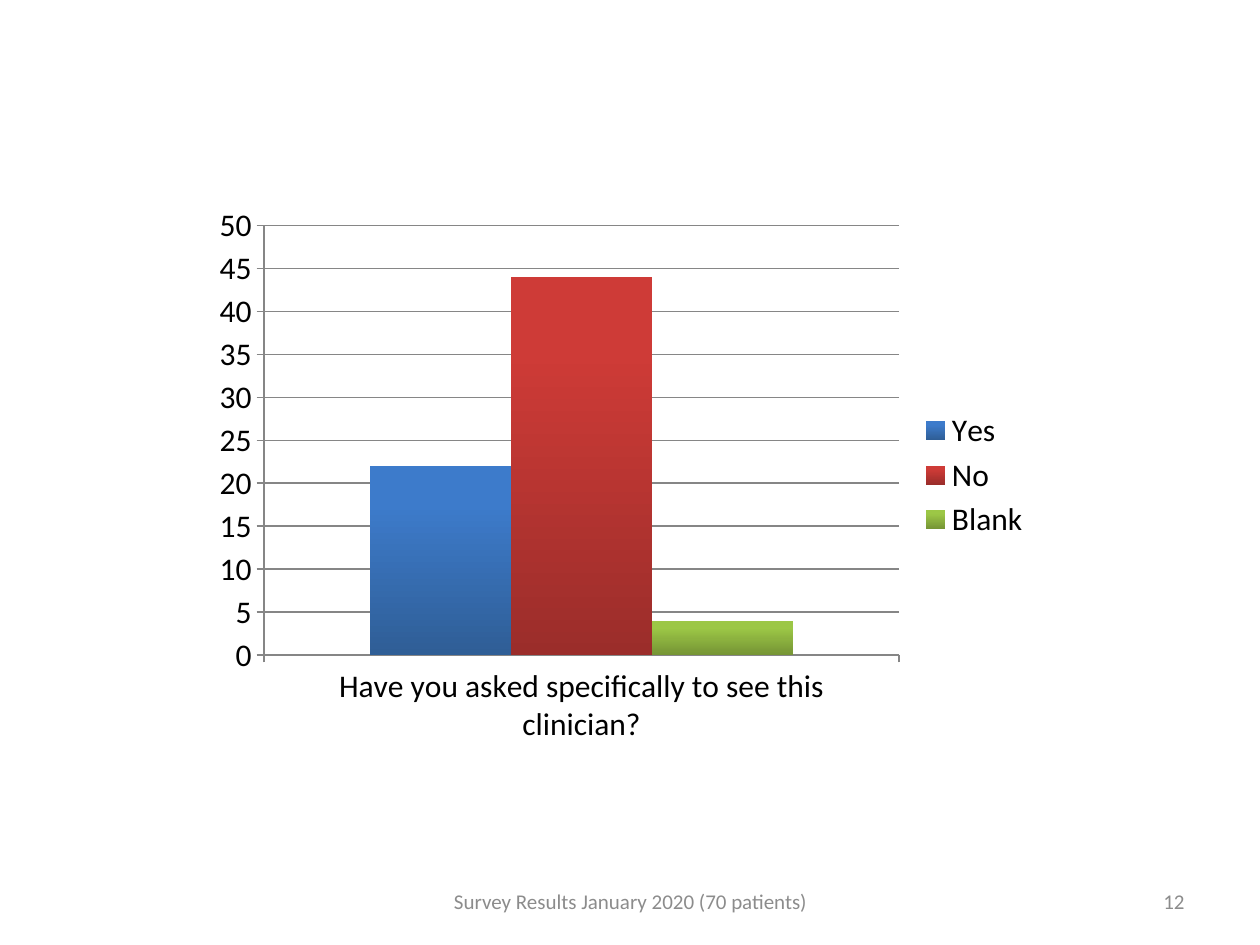
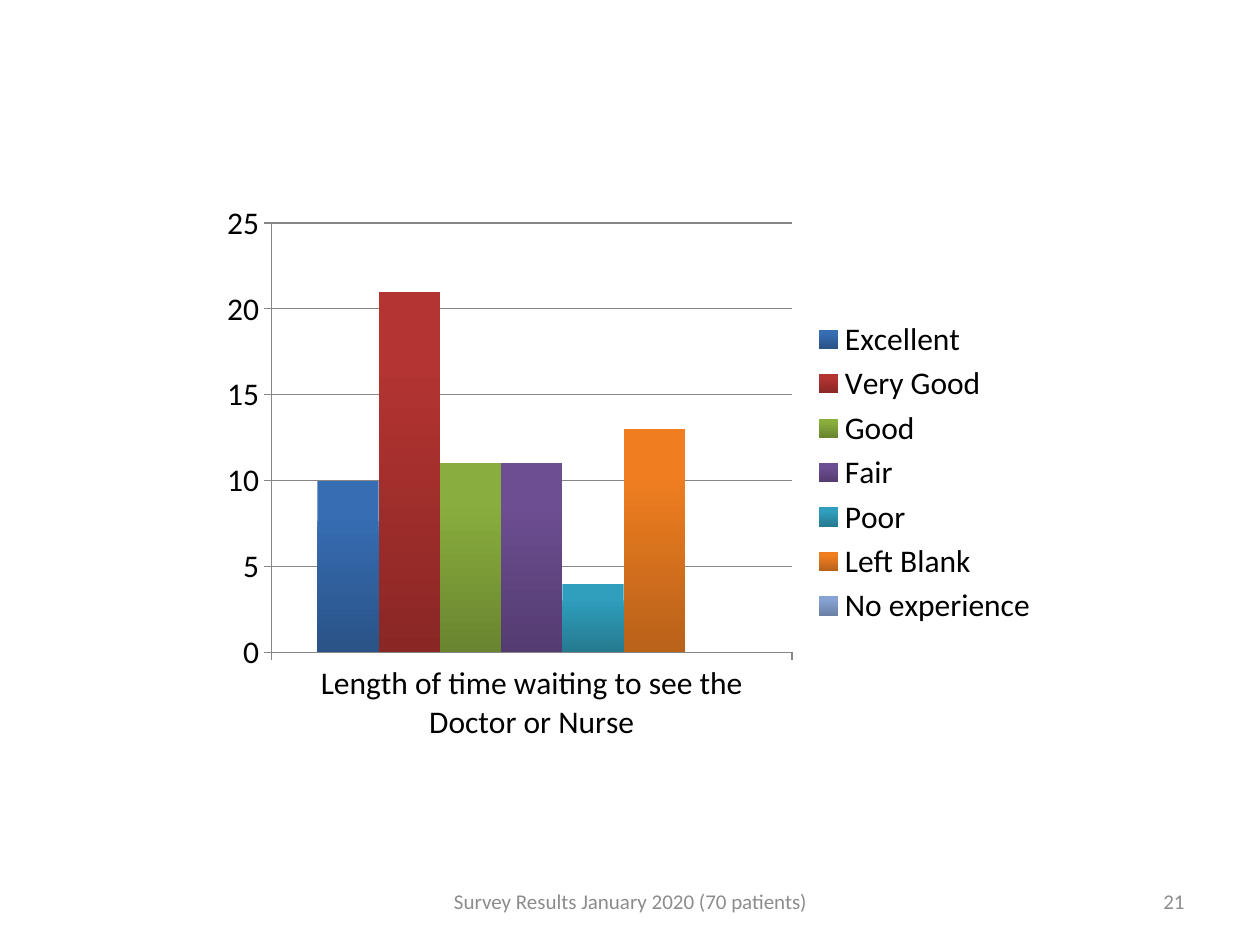
import pptx
import pptx.chart.data
import pptx.dml.color
import pptx.enum.chart
import pptx.enum.text
import pptx.util

Inches = pptx.util.Inches
Pt = pptx.util.Pt

FONT = "Calibri"
FOOTER = "Survey Results January 2020 (70 patients)"
COLORS = {"text": "000000", "footer": "8C8C8C", "axis": "868686"}

# Each answer: name, count, top and bottom colour of its column
QUESTIONS = [
    {
        "question": "Have you asked specifically to see this clinician?",
        "number": "12", "left": 1.61, "top": 1.55, "maximum": 50,
        "answers": [
            ("Yes", 22, "3D7BCB", "2F5E96"),
            ("No", 44, "CE3B37", "9B2D2A"),
            ("Blank", 4, "9CC746", "769535"),
        ],
    },
    {
        "question": "Length of time waiting to see the Doctor or Nurse",
        "number": "21", "left": 1.67, "top": 1.53, "maximum": 25,
        "answers": [
            ("Excellent", 10, "366DB3", "2A5387"),
            ("Very Good", 21, "B33431", "8A2725"),
            ("Good", 11, "89AE3D", "6A852F"),
            ("Fair", 11, "6D4E92", "543C70"),
            ("Poor", 4, "2F9FBD", "267A90"),
            ("Left Blank", 13, "F07E20", "B8621A"),
            ("No experience", 0, "87A3D3", "6B80A4"),
        ],
    },
]


def rgb(value):
    return pptx.dml.color.RGBColor.from_string(value)


def add_footer(page, text, left, width, alignment):
    box = page.shapes.add_textbox(Inches(left), Inches(6.95), Inches(width), Inches(0.4))
    frame = box.text_frame
    frame.word_wrap = True
    frame.vertical_anchor = pptx.enum.text.MSO_ANCHOR.MIDDLE
    para = frame.paragraphs[0]
    para.text = text
    para.alignment = alignment
    para.font.name = FONT
    para.font.size = Pt(12)
    para.font.color.rgb = rgb(COLORS["footer"])


deck = pptx.Presentation()
deck.slide_width = Inches(10)
deck.slide_height = Inches(7.5)

for item in QUESTIONS:
    page = deck.slides.add_slide(deck.slide_layouts[6])

    # Column chart with one series per answer
    data = pptx.chart.data.CategoryChartData()
    data.categories = [item["question"]]
    for name, count, _, _ in item["answers"]:
        data.add_series(name, [count])
    chart = page.shapes.add_chart(
        pptx.enum.chart.XL_CHART_TYPE.COLUMN_CLUSTERED,
        Inches(item["left"]), Inches(item["top"]), Inches(6.67), Inches(4.44), data,
    ).chart
    chart.has_title = False
    chart.font.name = FONT
    chart.font.size = Pt(18)
    chart.font.color.rgb = rgb(COLORS["text"])
    chart.has_legend = True
    chart.legend.position = pptx.enum.chart.XL_LEGEND_POSITION.RIGHT
    chart.legend.include_in_layout = False

    # Axes and gridlines
    scale = chart.value_axis
    scale.minimum_scale = 0
    scale.maximum_scale = item["maximum"]
    scale.major_unit = 5
    scale.has_major_gridlines = True
    for line in (scale.format.line, chart.category_axis.format.line,
                 scale.major_gridlines.format.line):
        line.color.rgb = rgb(COLORS["axis"])
        line.width = Pt(0.75)
    for axis in (scale, chart.category_axis):
        axis.major_tick_mark = pptx.enum.chart.XL_TICK_MARK.OUTSIDE

    # Columns shaded from top to bottom
    plot = chart.plots[0]
    plot.vary_by_categories = False
    plot.gap_width = 150
    plot.overlap = 0
    for series, (_, _, top_color, bottom_color) in zip(plot.series, item["answers"]):
        fill = series.format.fill
        fill.gradient()
        fill.gradient_angle = 270
        first, last = fill.gradient_stops
        first.color.rgb = rgb(top_color)
        first.position = 0.2
        last.color.rgb = rgb(bottom_color)
        last.position = 1
        series.invert_if_negative = False

    # Page number and footer
    add_footer(page, item["number"], 7.17, 2.33, pptx.enum.text.PP_ALIGN.RIGHT)
    add_footer(page, FOOTER, 3.42, 3.17, pptx.enum.text.PP_ALIGN.CENTER)

deck.save("out.pptx")
